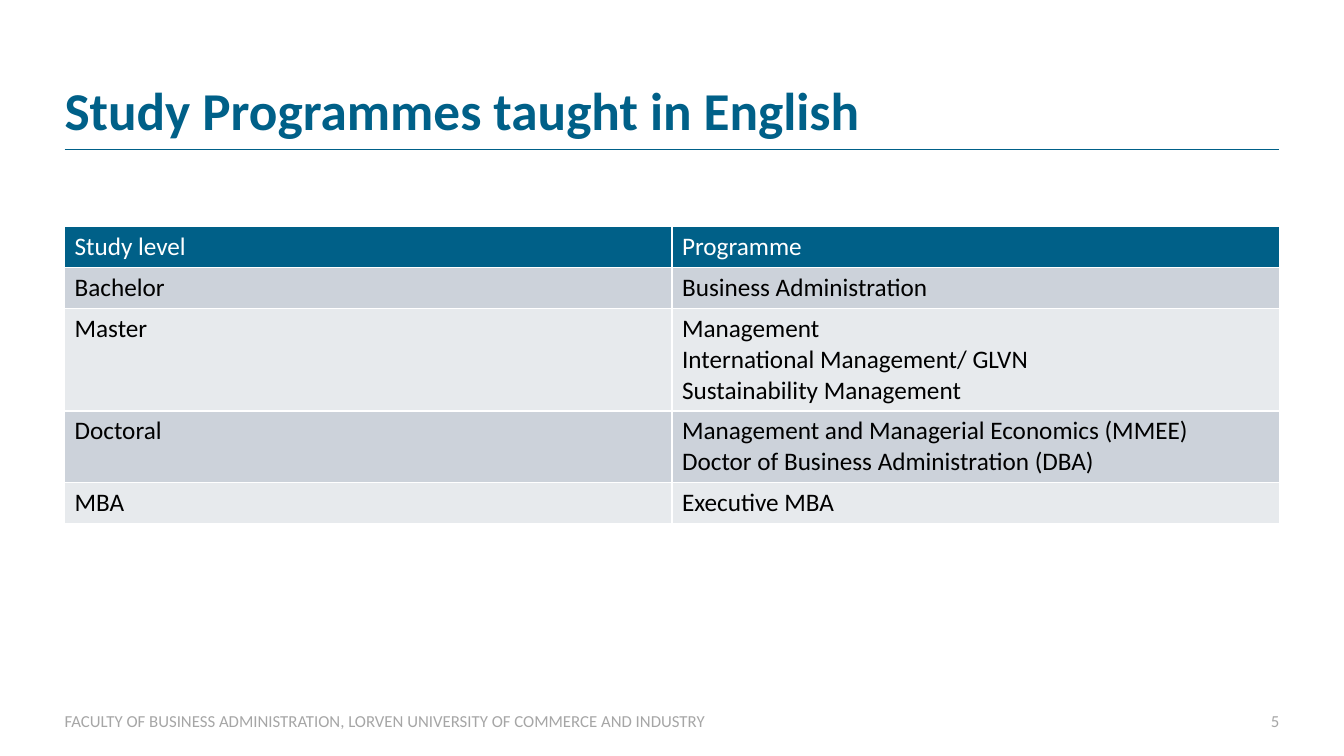
from lxml import etree
from pptx import Presentation
from pptx.dml.color import RGBColor
from pptx.enum.shapes import MSO_CONNECTOR
from pptx.enum.text import MSO_ANCHOR, PP_ALIGN
from pptx.oxml.ns import qn
from pptx.util import Inches, Pt

STRAIGHT = MSO_CONNECTOR.STRAIGHT
BOTTOM, MIDDLE = MSO_ANCHOR.BOTTOM, MSO_ANCHOR.MIDDLE
LEFT, RIGHT = PP_ALIGN.LEFT, PP_ALIGN.RIGHT
TITLE_ONLY = 5
FONT = "Calibri"
COLORS = {
    "accent": "006088",
    "white": "FFFFFF",
    "text": "000000",
    "band_dark": "CCD2DA",
    "band_light": "E7EAED",
    "footer": "A6A6A6",
}
MARGIN, CONTENT_WIDTH = 0.64, 12.05
ROW_HEIGHT, EXTRA_LINE = 0.4, 0.3
PROGRAMMES = [
    ("Study level", "Programme"),
    ("Bachelor", "Business Administration"),
    ("Master", "Management\nInternational Management/ GLVN\nSustainability Management"),
    ("Doctoral", "Management and Managerial Economics (MMEE)\n"
                 "Doctor of Business Administration (DBA)"),
    ("MBA", "Executive MBA"),
]
FOOTER = "FACULTY OF BUSINESS ADMINISTRATION, LORVEN UNIVERSITY OF COMMERCE AND INDUSTRY"


def color(name):
    """Return the named colour."""
    return RGBColor.from_string(COLORS[name])


def set_text(text_frame, text, size, color_name, bold=False, align=LEFT):
    """Fill a text frame and format its runs."""
    text_frame.text = text
    for paragraph in text_frame.paragraphs:
        paragraph.alignment = align
        for run in paragraph.runs:
            run.font.name = FONT
            run.font.size = Pt(size)
            run.font.bold = bold
            run.font.color.rgb = color(color_name)


def trim_frame(text_frame, anchor):
    """Remove the insets, wrap the text and anchor it."""
    text_frame.margin_left = text_frame.margin_right = 0
    text_frame.margin_top = text_frame.margin_bottom = 0
    text_frame.word_wrap = True
    text_frame.vertical_anchor = anchor


def add_title(slide, left, top, width, height):
    """Place the title and the rule beneath it."""
    title = slide.shapes.title
    title.left, title.top = Inches(left), Inches(top)
    title.width, title.height = Inches(width), Inches(height)
    trim_frame(title.text_frame, BOTTOM)
    set_text(title.text_frame, "Study Programmes taught in English", 38, "accent", bold=True)
    title.text_frame.paragraphs[0].line_spacing = 0.9
    rule_top = Inches(top + height + 0.07)
    rule = slide.shapes.add_connector(
        STRAIGHT, Inches(left), rule_top, Inches(left + width), rule_top)
    rule.line.color.rgb = color("accent")
    rule.line.width = Pt(0.25)
    etree.SubElement(rule._element.spPr, qn("a:effectLst"))


def add_borders(cell):
    """Draw thin white borders on all sides of a cell."""
    properties = cell._tc.get_or_add_tcPr()
    for index, side in enumerate(("a:lnL", "a:lnR", "a:lnT", "a:lnB")):
        border = etree.Element(qn(side), w=str(Pt(1)))
        fill = etree.SubElement(border, qn("a:solidFill"))
        etree.SubElement(fill, qn("a:srgbClr"), val=COLORS["white"])
        properties.insert(index, border)


def add_programme_table(slide, left, top, width):
    """Place the banded table of study levels and programmes."""
    heights = [ROW_HEIGHT + EXTRA_LINE * programme.count("\n") for _, programme in PROGRAMMES]
    table = slide.shapes.add_table(
        len(PROGRAMMES), 2, Inches(left), Inches(top), Inches(width), Inches(sum(heights))).table
    for row_index, texts in enumerate(PROGRAMMES):
        table.rows[row_index].height = Inches(heights[row_index])
        header = row_index == 0
        band = "band_dark" if row_index % 2 else "band_light"
        for column_index, text in enumerate(texts):
            cell = table.cell(row_index, column_index)
            set_text(cell.text_frame, text, 18, "white" if header else "text")
            cell.fill.solid()
            cell.fill.fore_color.rgb = color("accent" if header else band)
            add_borders(cell)


def add_footer(slide, left, top, width, height):
    """Place the faculty name at the left and the slide number at the right."""
    number_width = 0.51
    parts = [
        (left, 10.16, FOOTER, LEFT),
        (left + width - number_width, number_width, "5", RIGHT),
    ]
    for part_left, part_width, text, align in parts:
        box = slide.shapes.add_textbox(
            Inches(part_left), Inches(top), Inches(part_width), Inches(height))
        trim_frame(box.text_frame, MIDDLE)
        set_text(box.text_frame, text, 12, "footer", align=align)


def main():
    """Build and save the presentation."""
    presentation = Presentation()
    presentation.slide_width = Inches(13.33)
    presentation.slide_height = Inches(7.5)
    slide = presentation.slides.add_slide(presentation.slide_layouts[TITLE_ONLY])
    add_title(slide, MARGIN, 0.83, CONTENT_WIDTH, 0.58)
    add_programme_table(slide, MARGIN, 2.25, CONTENT_WIDTH)
    add_footer(slide, MARGIN, 7.05, CONTENT_WIDTH, 0.2)
    presentation.save("out.pptx")


if __name__ == "__main__":
    main()
